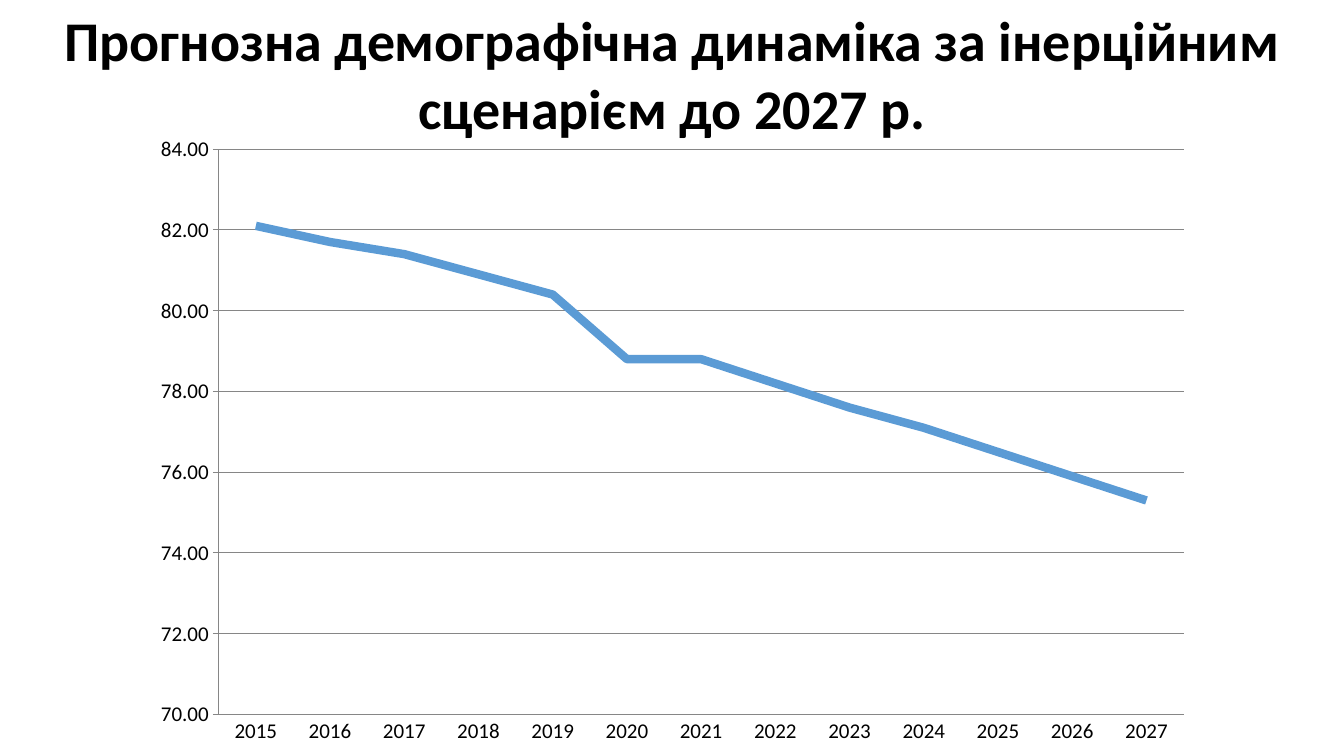
import lxml.etree
import pptx
import pptx.chart.data
import pptx.dml.color
import pptx.enum.chart
import pptx.enum.text
import pptx.oxml
import pptx.oxml.ns
import pptx.util

Inches = pptx.util.Inches
Pt = pptx.util.Pt


def colour(hex_value):
    return pptx.dml.color.RGBColor.from_string(hex_value)


def apply(target, values):
    for name, value in values.items():
        setattr(target, name, value)


class ForecastSlide:
    font = "Calibri"
    ink = "000000"
    grid = "868686"
    trend = "5B9BD5"

    def __init__(self, deck):
        self.slide = deck.slides.add_slide(deck.slide_layouts[5])

    def format_font(self, font, size, bold=False):
        apply(font, {"name": self.font, "size": Pt(size), "bold": bold})
        font.color.rgb = colour(self.ink)

    def format_line(self, line, hex_value, width):
        line.color.rgb = colour(hex_value)
        line.width = Pt(width)

    def line_chart(self, box, years, population, plot_box):
        data = pptx.chart.data.CategoryChartData(number_format="0.00")
        data.categories = years
        data.add_series("Series 1", population)
        chart = self.slide.shapes.add_chart(
            pptx.enum.chart.XL_CHART_TYPE.LINE, *map(Inches, box), data
        ).chart
        apply(chart, {"has_legend": False, "has_title": False})
        self.format_font(chart.font, 15)
        chart.plots[0].vary_by_categories = False

        forecast = chart.plots[0].series[0]
        forecast.smooth = False
        forecast.marker.style = pptx.enum.chart.XL_MARKER_STYLE.NONE
        self.format_line(forecast.format.line, self.trend, 6)

        tick = pptx.enum.chart.XL_TICK_MARK
        apply(chart.category_axis, {
            "major_tick_mark": tick.NONE,
            "minor_tick_mark": tick.NONE,
            "has_major_gridlines": False,
        })
        scale = chart.value_axis
        apply(scale, {
            "minimum_scale": 70,
            "maximum_scale": 84,
            "major_unit": 2,
            "major_tick_mark": tick.OUTSIDE,
            "minor_tick_mark": tick.NONE,
            "has_major_gridlines": True,
        })
        apply(scale.tick_labels, {
            "number_format": "0.00",
            "number_format_is_linked": False,
        })
        for ruled in (chart.category_axis, scale, scale.major_gridlines):
            self.format_line(ruled.format.line, self.grid, 0.75)
        self.place_plot(chart, box, plot_box)

    def place_plot(self, chart, box, plot_box):
        qn = pptx.oxml.ns.qn
        left, top, width, height = box
        plot_left, plot_top, plot_width, plot_height = plot_box
        plot = chart._chartSpace.find(".//" + qn("c:plotArea"))
        for automatic in plot.findall(qn("c:layout")):
            plot.remove(automatic)
        layout = lxml.etree.Element(qn("c:layout"))
        manual = lxml.etree.SubElement(layout, qn("c:manualLayout"))
        settings = {
            "layoutTarget": "inner",
            "xMode": "edge",
            "yMode": "edge",
            "x": (plot_left - left) / width,
            "y": (plot_top - top) / height,
            "w": plot_width / width,
            "h": plot_height / height,
        }
        for name, value in settings.items():
            lxml.etree.SubElement(manual, qn("c:" + name)).set("val", str(value))
        plot.insert(0, layout)

    def title(self, box, wording):
        heading = self.slide.shapes.title
        apply(heading, dict(zip(("left", "top", "width", "height"), map(Inches, box))))
        frame = heading.text_frame
        frame.text = wording
        apply(frame, {
            "word_wrap": True,
            "auto_size": pptx.enum.text.MSO_AUTO_SIZE.SHAPE_TO_FIT_TEXT,
            "vertical_anchor": pptx.enum.text.MSO_ANCHOR.MIDDLE,
        })
        frame.paragraphs[0].alignment = pptx.enum.text.PP_ALIGN.CENTER
        self.format_font(frame.paragraphs[0].runs[0].font, 40, bold=True)
        self.slide.shapes._spTree.append(heading._element)


def main():
    deck = pptx.Presentation()
    apply(deck, {"slide_width": Inches(13.33), "slide_height": Inches(7.5)})
    forecast = ForecastSlide(deck)
    forecast.line_chart(
        (1.38, 1.23, 10.57, 6.27),
        [str(year) for year in range(2015, 2028)],
        (82.1, 81.7, 81.4, 80.9, 80.4, 78.8, 78.8,
         78.2, 77.6, 77.1, 76.5, 75.9, 75.3),
        (2.17, 1.48, 9.57, 5.61),
    )
    forecast.title(
        (0, 0, 13.33, 1.45),
        "Прогнозна демографічна динаміка за інерційним сценарієм до 2027 р.",
    )
    deck.save("out.pptx")


if __name__ == "__main__":
    main()
